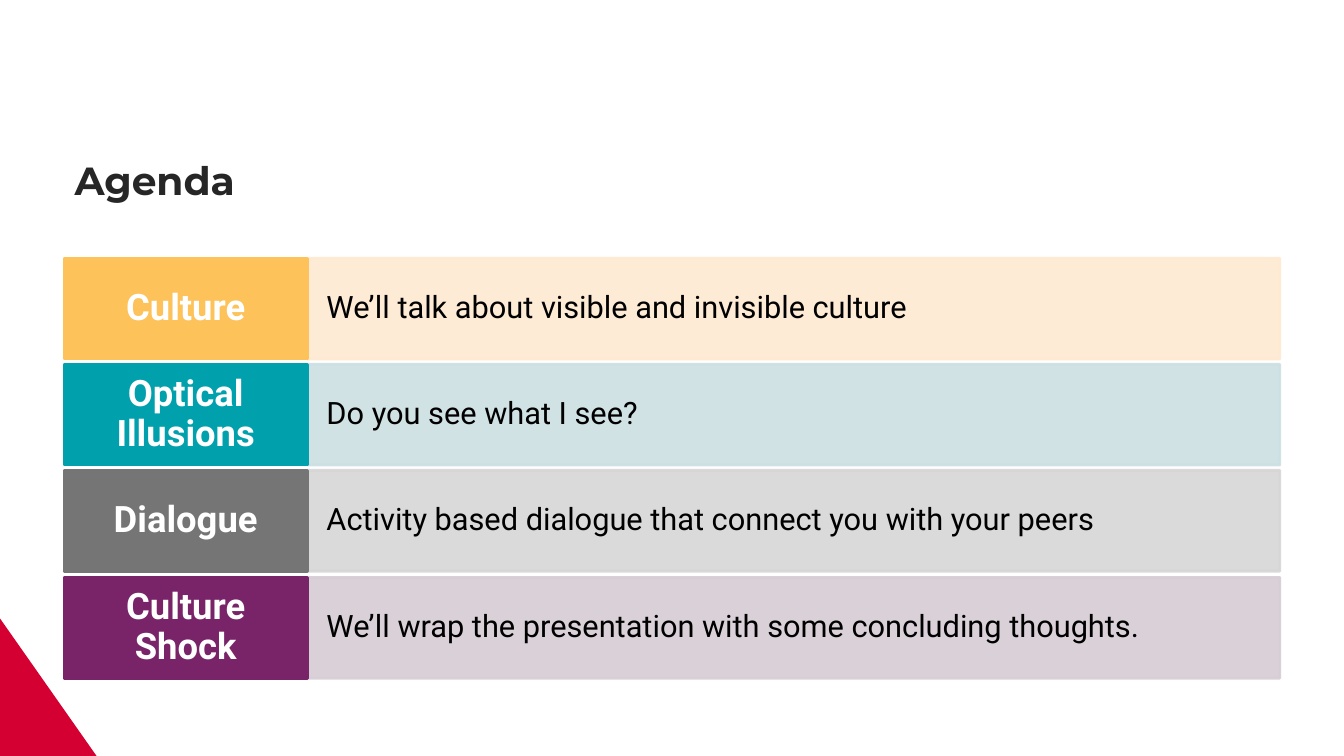
from lxml.etree import SubElement
from pptx import Presentation
from pptx.dml.color import RGBColor
from pptx.enum.shapes import MSO_SHAPE
from pptx.enum.text import MSO_ANCHOR, PP_ALIGN
from pptx.oxml.ns import qn
from pptx.util import Pt

EMU_PER_PX = 9525
AGENDA = [
    ("Culture", "We’ll talk about visible and invisible culture", "FDC259", "FEE9D1"),
    ("Optical Illusions", "Do you see what I see?", "00A0AD", "CCDFE3"),
    ("Dialogue", "Activity based dialogue that connect you with your peers", "767576", "D6D6D6"),
    ("Culture Shock", "We’ll wrap the presentation with some concluding thoughts.", "792369", "D7CDD4"),
]


def px(length):
    return length * EMU_PER_PX


def color(value):
    return RGBColor.from_string(value)


class SlideBuilder:
    heading_font = "Montserrat"
    body_font = "Roboto"

    def __init__(self, slide):
        self.slide = slide

    def set_text(self, shape, text, font, size, text_color, bold, anchor, align, inset):
        frame = shape.text_frame
        frame.word_wrap = True
        frame.vertical_anchor = anchor
        frame.margin_left = frame.margin_right = px(inset[0])
        frame.margin_top = frame.margin_bottom = px(inset[1])
        paragraph = frame.paragraphs[0]
        paragraph.text = text
        paragraph.alignment = align
        paragraph.line_spacing = 0.9
        paragraph.font.name = font
        paragraph.font.size = Pt(size)
        paragraph.font.bold = bold
        paragraph.font.color.rgb = color(text_color)

    def title(self, text, left, top, width, height):
        box = self.slide.shapes.add_textbox(px(left), px(top), px(width), px(height))
        self.set_text(box, text, self.heading_font, 28, "262626", True,
                      MSO_ANCHOR.BOTTOM, PP_ALIGN.LEFT, (10, 5))

    def band(self, left, top, width, height, fill, opacity=100):
        shape = self.slide.shapes.add_shape(
            MSO_SHAPE.RECTANGLE, px(left), px(top), px(width), px(height))
        shape.shadow.inherit = False
        shape.fill.solid()
        shape.fill.fore_color.rgb = color(fill)
        shape.line.color.rgb = color(fill)
        shape.line.width = Pt(2)
        if opacity < 100:
            for element in shape.element.iter(qn("a:srgbClr")):
                SubElement(element, qn("a:alpha")).set("val", str(opacity * 1000))
        return shape

    def description(self, text, left, top, width, height, fill):
        shape = self.band(left, top, width, height, fill, opacity=90)
        self.set_text(shape, text, self.body_font, 22, "000000", False,
                      MSO_ANCHOR.MIDDLE, PP_ALIGN.LEFT, (18, 24))

    def label(self, text, left, top, width, height, fill):
        shape = self.band(left, top, width, height, fill)
        self.set_text(shape, text, self.body_font, 26, "FFFFFF", True,
                      MSO_ANCHOR.MIDDLE, PP_ALIGN.CENTER, (12, 10))

    def polygon(self, points, fill):
        outline = self.slide.shapes.build_freeform(*points[0], scale=EMU_PER_PX)
        outline.add_line_segments(points[1:], close=True)
        shape = outline.convert_to_shape()
        shape.shadow.inherit = False
        shape.fill.solid()
        shape.fill.fore_color.rgb = color(fill)
        shape.line.fill.background()


def main():
    presentation = Presentation()
    presentation.slide_width = px(1280)
    presentation.slide_height = px(720)
    builder = SlideBuilder(presentation.slides.add_slide(presentation.slide_layouts[6]))

    builder.polygon([(0, 589), (92, 720), (0, 720)], "D50032")
    builder.title("Agenda", 61, 74, 1158, 125)

    left, top, label_width, description_width, height = 61, 246, 232, 926, 96
    last_top = 550
    for index, (name, details, strong, pale) in enumerate(AGENDA):
        row_top = top + (last_top - top) * index // (len(AGENDA) - 1)
        builder.description(details, left + label_width, row_top, description_width, height, pale)
        builder.label(name, left, row_top, label_width, height, strong)

    presentation.save("out.pptx")


if __name__ == "__main__":
    main()
